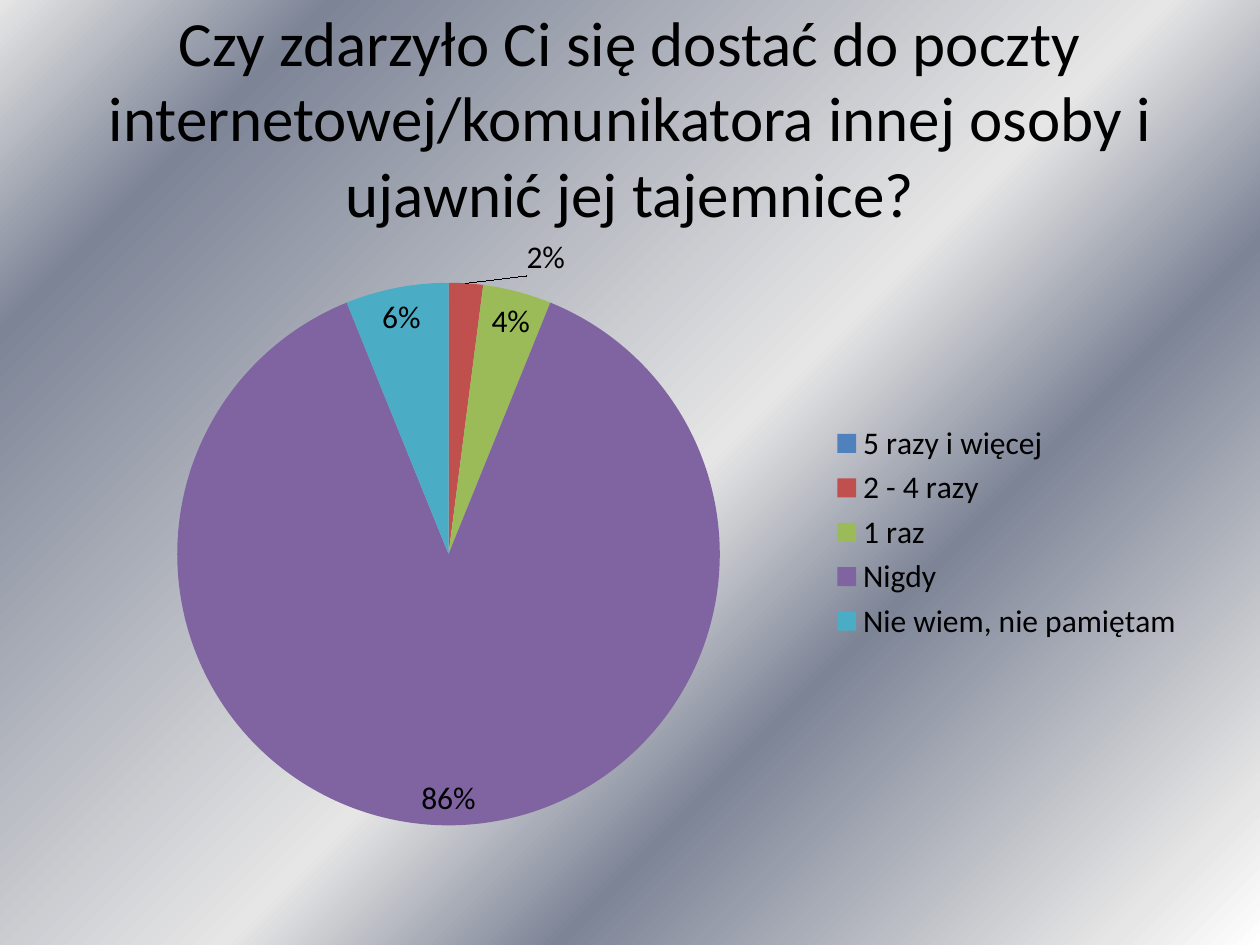
import pptx
import pptx.chart.data
import pptx.dml.color
import pptx.enum.chart
import pptx.enum.text
import pptx.oxml
import pptx.util
from pptx.oxml.ns import nsdecls

Pt = pptx.util.Pt
RGB = pptx.dml.color.RGBColor.from_string

TITLE = ("Czy zdarzyło Ci się dostać do poczty internetowej/komunikatora "
         "innej osoby i ujawnić jej tajemnice?")
ANSWERS = [  # answer, share, colour name
    ("5 razy i więcej", 0, "blue"),
    ("2 - 4 razy", 0.02, "red"),
    ("1 raz", 0.04, "green"),
    ("Nigdy", 0.86, "purple"),
    ("Nie wiem, nie pamiętam", 0.06, "aqua"),
]
COLORS = {"text": "000000", "white": "FFFFFF", "light": "E6E6E6", "dark": "7D8496",
          "blue": "4F81BD", "red": "C0504D", "green": "9BBB59",
          "purple": "8064A2", "aqua": "4BACC6"}
BACKGROUND = [(0, "white"), (7, "light"), (32, "dark"),
              (47, "light"), (85, "dark"), (100, "light")]
ANGLE = 225
FONT = "Calibri"
PERCENT = "0%"
MOVED_LABEL = 1  # the 2% label stands beside its slice
LEFT, WIDTH = 36, 648


def style(font, size):
    font.name, font.size = FONT, Pt(size)
    font.color.rgb = RGB(COLORS["text"])


def layout(**parts):
    items = "".join(f'<c:{k} val="{v}"/>' for k, v in parts.items())
    return pptx.oxml.parse_xml(
        f'<c:layout {nsdecls("c")}><c:manualLayout>{items}</c:manualLayout></c:layout>')


prs = pptx.Presentation()
prs.slide_width, prs.slide_height = Pt(720), Pt(540)
s = prs.slides.add_slide(prs.slide_layouts[6])

# Background gradient
stops = "".join(f'<a:gs pos="{pos * 1000}"><a:srgbClr val="{COLORS[name]}"/></a:gs>'
                for pos, name in BACKGROUND)
s.background.fill.solid()
bg_pr = s.background._cSld.bg.bgPr
bg_pr.replace(bg_pr[0], pptx.oxml.parse_xml(
    f'<a:gradFill {nsdecls("a")} rotWithShape="1"><a:gsLst>{stops}</a:gsLst>'
    f'<a:lin ang="{ANGLE * 60000}" scaled="0"/></a:gradFill>'))

# Title
tf = s.shapes.add_textbox(Pt(LEFT), Pt(21.6), Pt(WIDTH), Pt(90)).text_frame
tf.word_wrap = True
tf.vertical_anchor = pptx.enum.text.MSO_ANCHOR.MIDDLE
tf.text = TITLE
p = tf.paragraphs[0]
p.alignment = pptx.enum.text.PP_ALIGN.CENTER
style(p.runs[0].font, 36)

# Pie chart
data = pptx.chart.data.CategoryChartData(number_format=PERCENT)
data.categories = [answer for answer, _, _ in ANSWERS]
data.add_series("Series 1", [share for _, share, _ in ANSWERS])
chart = s.shapes.add_chart(pptx.enum.chart.XL_CHART_TYPE.PIE, Pt(LEFT), Pt(126),
                           Pt(WIDTH), Pt(356.4), data).chart
style(chart.font, 18)
chart.has_title = False
chart.has_legend = True
chart.legend.position = pptx.enum.chart.XL_LEGEND_POSITION.RIGHT
chart.legend.include_in_layout = False
plot = chart.plots[0]
plot.vary_by_categories = True
points = plot.series[0].points
for i, (_, _, name) in enumerate(ANSWERS):
    fill = points[i].format.fill
    fill.solid()
    fill.fore_color.rgb = RGB(COLORS[name])

# Place of the pie inside the chart
plot_area = chart._chartSpace.chart.plotArea
for old in plot_area.xpath("c:layout"):
    plot_area.remove(old)
plot_area.insert(0, layout(layoutTarget="inner", xMode="edge", yMode="edge",
                           x=0.1, y=0.1, w=0.48, h=0.87))

# Data labels, with none on the empty slice
best_fit = pptx.enum.chart.XL_LABEL_POSITION.BEST_FIT
labels = plot.series[0].data_labels
labels.show_value = True
labels.number_format, labels.number_format_is_linked = PERCENT, False
labels.position = best_fit
style(labels.font, 18)
points[MOVED_LABEL].data_label.position = best_fit
moved = labels._element.xpath("c:dLbl")[0]
moved.insert(1, layout(x=0.07, y=0))
moved.insert(2, pptx.oxml.parse_xml(
    f'<c:numFmt {nsdecls("c")} formatCode="{PERCENT}" sourceLinked="0"/>'))
labels._element.insert(0, pptx.oxml.parse_xml(
    f'<c:dLbl {nsdecls("c")}><c:idx val="0"/><c:delete val="1"/></c:dLbl>'))

prs.save("out.pptx")
